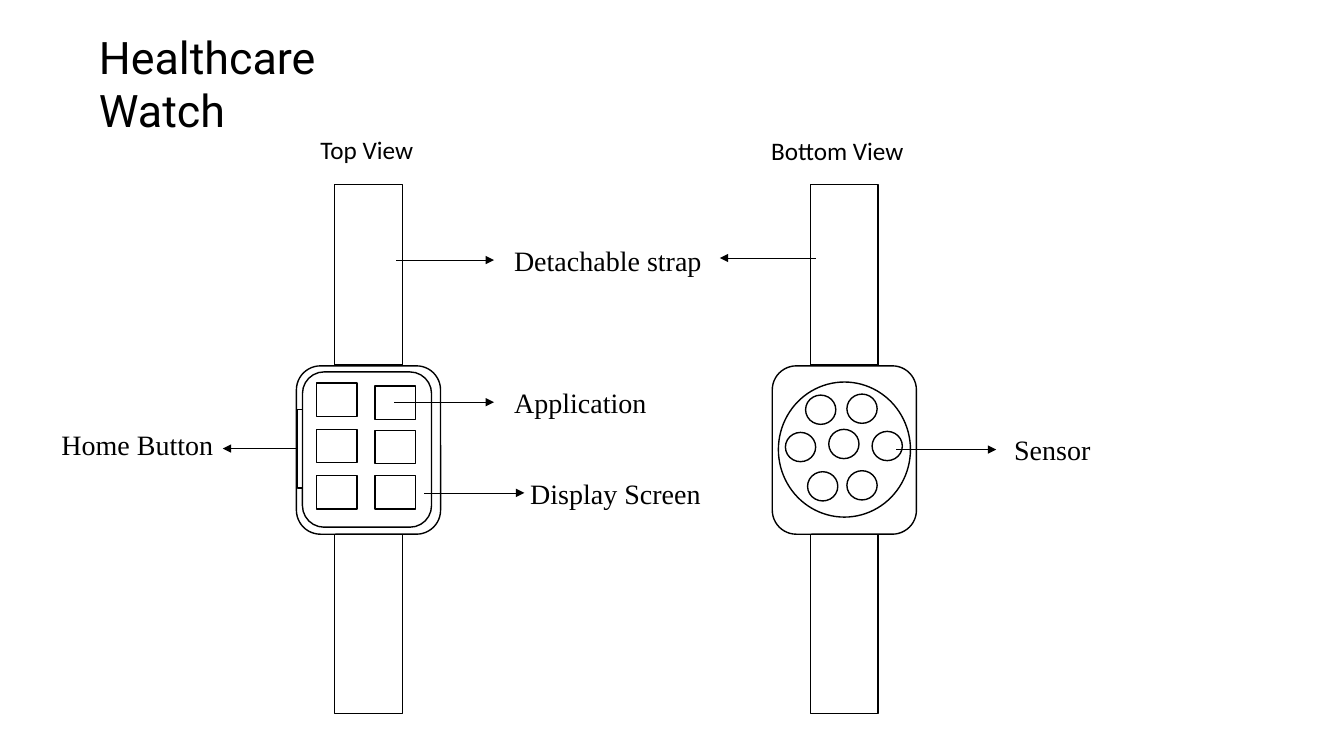
from typing import NamedTuple

from lxml import etree
from pptx import Presentation
from pptx.dml.color import RGBColor
from pptx.enum.shapes import MSO_CONNECTOR, MSO_SHAPE
from pptx.enum.text import MSO_ANCHOR, MSO_AUTO_SIZE, PP_ALIGN
from pptx.oxml.ns import qn
from pptx.shapes.autoshape import Shape
from pptx.shapes.connector import Connector
from pptx.text.text import TextFrame
from pptx.util import Inches, Pt

RECTANGLE = MSO_SHAPE.RECTANGLE
ROUNDED = MSO_SHAPE.ROUNDED_RECTANGLE
OVAL = MSO_SHAPE.OVAL
STRAIGHT = MSO_CONNECTOR.STRAIGHT
LEFT_SIDE = 1
BLACK = "000000"
WHITE = "FFFFFF"
SERIF = "Times New Roman"


class Box(NamedTuple):
    left: float
    top: float
    width: float
    height: float


class Label(NamedTuple):
    text: str
    box: Box
    size: int = 20
    font: str = SERIF


class Arrow(NamedTuple):
    start: float
    end: float
    y: float


BODY_LEFTS = (2.94, 7.66)
STRAP_TOPS = (1.83, 5.29)
SCREEN = Box(3.0, 3.69, 1.28, 1.54)
HOME_BUTTON = Box(2.95, 4.06, 0.05, 0.78)
SENSOR_PLATE = Box(7.72, 3.79, 1.31, 1.34)
APP_TOPS_BY_LEFT = {3.14: (3.80, 4.26, 4.72), 3.72: (3.83, 4.27, 4.72)}
SENSOR_CORNERS = (
    (7.99, 3.92), (8.40, 3.91), (8.01, 4.68), (7.79, 4.29),
    (8.65, 4.28), (8.22, 4.26), (8.40, 4.67),
)
LABELS = (
    Label("Top View", Box(3.08, 1.28, 1.13, 0.4), 18, "Calibri"),
    Label("Bottom View", Box(7.55, 1.29, 1.53, 0.4), 18, "Calibri"),
    Label("Detachable strap", Box(5.0, 2.37, 2.07, 0.44)),
    Label("Application", Box(5.0, 3.78, 1.52, 0.44)),
    Label("Display Screen", Box(5.16, 4.68, 1.91, 0.44)),
    Label("Home Button", Box(0.51, 4.19, 1.84, 0.44)),
    Label("Sensor", Box(9.96, 4.24, 0.96, 0.44)),
)
ARROWS = (
    Arrow(3.93, 4.90, 2.58),
    Arrow(8.09, 7.14, 2.56),
    Arrow(3.91, 4.90, 3.99),
    Arrow(4.21, 5.20, 4.89),
    Arrow(8.89, 9.88, 4.46),
)
HOME_ARROW = Arrow(2.95, 2.21, 4.45)

deck = Presentation()
deck.slide_width, deck.slide_height = Inches(13.33), Inches(7.5)
page = deck.slides.add_slide(deck.slide_layouts[5])


def color(code: str) -> RGBColor:
    return RGBColor.from_string(code)


def add_outline(kind: MSO_SHAPE, box: Box, fill: str | None = WHITE) -> Shape:
    shape = page.shapes.add_shape(kind, *map(Inches, box))
    shape.shadow.inherit = False
    if fill is None:
        shape.fill.background()
    else:
        shape.fill.solid()
        shape.fill.fore_color.rgb = color(fill)
    shape.line.color.rgb = color(BLACK)
    shape.line.width = Pt(1)
    return shape


def add_arrow(arrow: Arrow) -> Connector:
    line = page.shapes.add_connector(
        STRAIGHT, Inches(arrow.start), Inches(arrow.y), Inches(arrow.end), Inches(arrow.y)
    )
    line.line.color.rgb = color(BLACK)
    line.line.width = Pt(0.5)
    etree.SubElement(line.line._get_or_add_ln(), qn("a:tailEnd"), type="triangle")
    etree.SubElement(line._element.spPr, qn("a:effectLst"))
    return line


def write(frame: TextFrame, label: Label) -> None:
    frame.text = label.text
    para = frame.paragraphs[0]
    para.alignment = PP_ALIGN.LEFT
    para.font.name = label.font
    para.font.size = Pt(label.size)
    para.font.color.rgb = color(BLACK)


def add_label(label: Label) -> None:
    frame = page.shapes.add_textbox(*map(Inches, label.box)).text_frame
    frame.word_wrap = False
    write(frame, label)


def add_title(label: Label) -> None:
    title = page.shapes.title
    title.left, title.top, title.width, title.height = map(Inches, label.box)
    frame = title.text_frame
    frame.word_wrap = True
    frame.auto_size = MSO_AUTO_SIZE.NONE
    frame.vertical_anchor = MSO_ANCHOR.TOP
    write(frame, label)


def add_watch(body_left: float) -> None:
    """Draw both straps and the case shared by the two views."""
    for top in STRAP_TOPS:
        add_outline(RECTANGLE, Box(body_left + 0.38, top, 0.67, 1.79))
    add_outline(ROUNDED, Box(body_left, 3.63, 1.43, 1.67))


def main() -> None:
    add_title(Label("Healthcare Watch", Box(0.88, 0.24, 2.9, 1.17), 32, "Roboto"))
    for body_left in BODY_LEFTS:
        add_watch(body_left)

    add_outline(ROUNDED, SCREEN)
    for left, tops in APP_TOPS_BY_LEFT.items():
        for top in tops:
            add_outline(RECTANGLE, Box(left, top, 0.4, 0.33))
    home_button = add_outline(RECTANGLE, HOME_BUTTON, fill=None)

    add_outline(OVAL, SENSOR_PLATE, fill=None)
    for left, top in SENSOR_CORNERS:
        add_outline(OVAL, Box(left, top, 0.3, 0.29), fill=None)

    for arrow in ARROWS:
        add_arrow(arrow)
    add_arrow(HOME_ARROW).begin_connect(home_button, LEFT_SIDE)
    for label in LABELS:
        add_label(label)
    deck.save("out.pptx")


if __name__ == "__main__":
    main()
